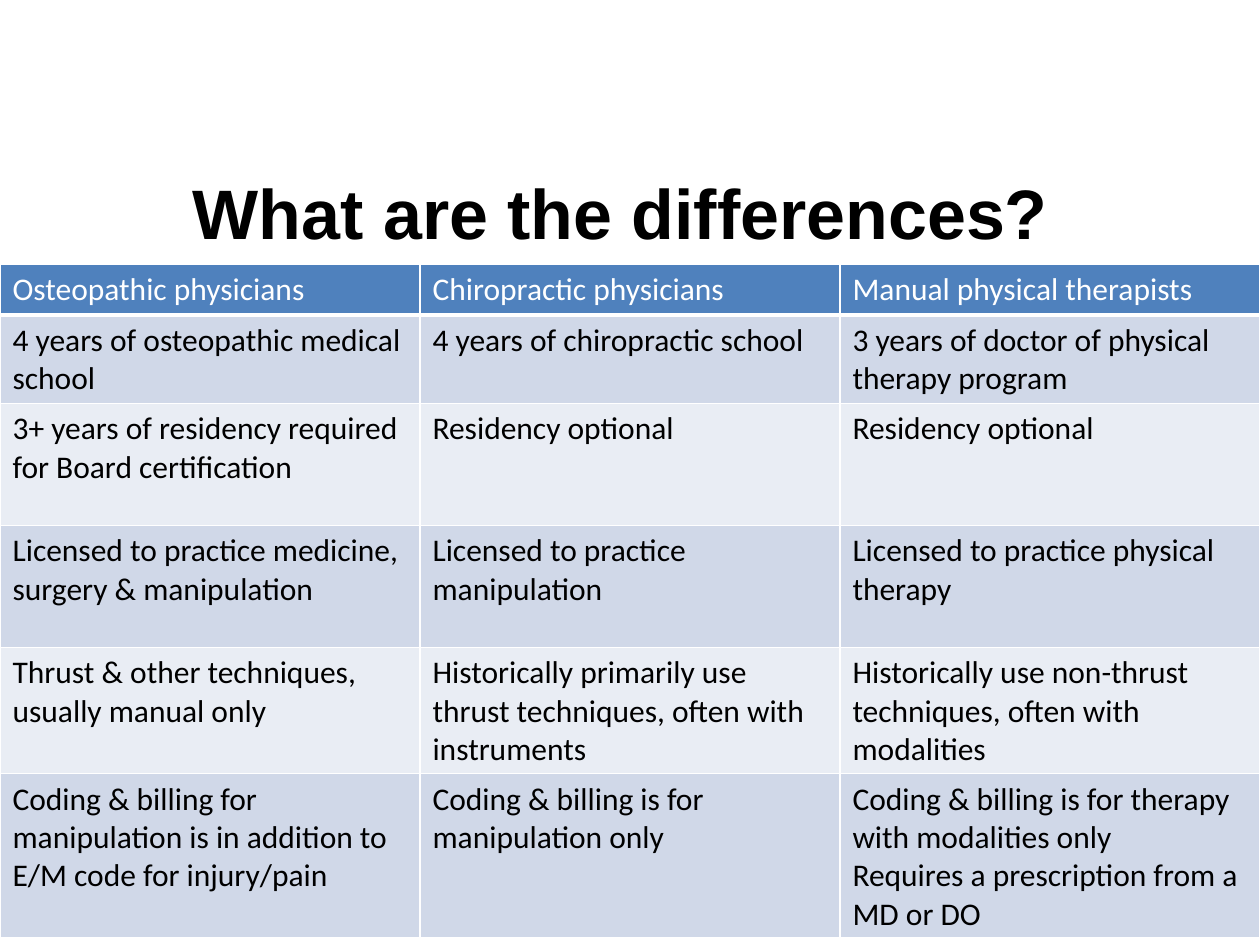
from dataclasses import dataclass

from lxml import etree
from pptx import Presentation
from pptx.dml.color import RGBColor
from pptx.enum.text import MSO_ANCHOR, PP_ALIGN
from pptx.oxml.ns import qn
from pptx.util import Inches, Pt

CENTER = PP_ALIGN.CENTER
MIDDLE = MSO_ANCHOR.MIDDLE

BLACK = RGBColor(0x00, 0x00, 0x00)
WHITE = RGBColor(0xFF, 0xFF, 0xFF)
BLUE = RGBColor(0x4F, 0x81, 0xBD)
DARK = RGBColor(0xD0, 0xD8, 0xE8)
LIGHT = RGBColor(0xE9, 0xED, 0xF4)

WIDE, HIGH = Inches(10), Inches(7.5)
MARGIN = 0.05
TABLE_TOP = 0.28

TITLE = {"name": "Arial", "size": Pt(40), "bold": True}
BODY = {"name": "Calibri", "size": Pt(18), "bold": False}


@dataclass(frozen=True)
class Row:
    high: float
    texts: tuple[str, str, str]


ROWS = (
    Row(0.39, ("Osteopathic physicians", "Chiropractic physicians",
               "Manual physical therapists")),
    Row(0.68, ("4 years of osteopathic medical school",
               "4 years of chiropractic school",
               "3 years of doctor of physical therapy program")),
    Row(0.97, ("3+ years of residency required for Board certification",
               "Residency optional", "Residency optional")),
    Row(0.97, ("Licensed to practice medicine, surgery & manipulation",
               "Licensed to practice manipulation",
               "Licensed to practice physical therapy")),
    Row(0.97, ("Thrust & other techniques, usually manual only",
               "Historically primarily use thrust techniques, "
               "often with instruments",
               "Historically use non-thrust techniques, "
               "often with modalities")),
    Row(1.26, ("Coding & billing for manipulation is in addition to "
               "E/M code for injury/pain",
               "Coding & billing is for manipulation only",
               "Coding & billing is for therapy with modalities only\n"
               "Requires a prescription from a MD or DO")),
)


def style(frame, form: dict, color: RGBColor) -> None:
    for para in frame.paragraphs:
        for run in para.runs:
            for key, value in form.items():
                setattr(run.font, key, value)
            run.font.color.rgb = color


def border(cell, widths: dict[str, float]) -> None:
    """Draw white edges; call before the fill, which must follow them."""
    props = cell._tc.get_or_add_tcPr()
    for side, width in widths.items():
        line = etree.SubElement(props, qn(f"a:ln{side}"), w=str(Pt(width)))
        fill = etree.SubElement(line, qn("a:solidFill"))
        etree.SubElement(fill, qn("a:srgbClr"), val=str(WHITE))


def add_title(slide, text: str) -> None:
    box = slide.shapes.add_textbox(int(WIDE * MARGIN), Inches(1.03),
                                   int(WIDE * (1 - 2 * MARGIN)), Inches(1.3))
    frame = box.text_frame
    frame.word_wrap = True
    frame.vertical_anchor = MIDDLE
    frame.text = text
    frame.paragraphs[0].alignment = CENTER
    style(frame, TITLE, BLACK)


def add_grid(slide, rows: tuple[Row, ...]) -> None:
    total = Inches(sum(row.high for row in rows))
    grid = slide.shapes.add_table(len(rows), len(rows[0].texts), 0,
                                  int(HIGH * TABLE_TOP), WIDE, total).table
    for r, row in enumerate(rows):
        grid.rows[r].height = Inches(row.high)
        head = r == 0
        back = BLUE if head else DARK if r % 2 else LIGHT
        edges = {"L": 1, "R": 1, "T": 3 if r == 1 else 1, "B": 3 if head else 1}
        for c, text in enumerate(row.texts):
            cell = grid.cell(r, c)
            cell.text = text
            style(cell.text_frame, BODY, WHITE if head else BLACK)
            border(cell, edges)
            cell.fill.solid()
            cell.fill.fore_color.rgb = back


def main() -> None:
    deck = Presentation()
    deck.slide_width, deck.slide_height = WIDE, HIGH
    slide = deck.slides.add_slide(deck.slide_layouts[6])
    add_title(slide, "What are the differences? ")
    add_grid(slide, ROWS)
    deck.save("out.pptx")


if __name__ == "__main__":
    main()
